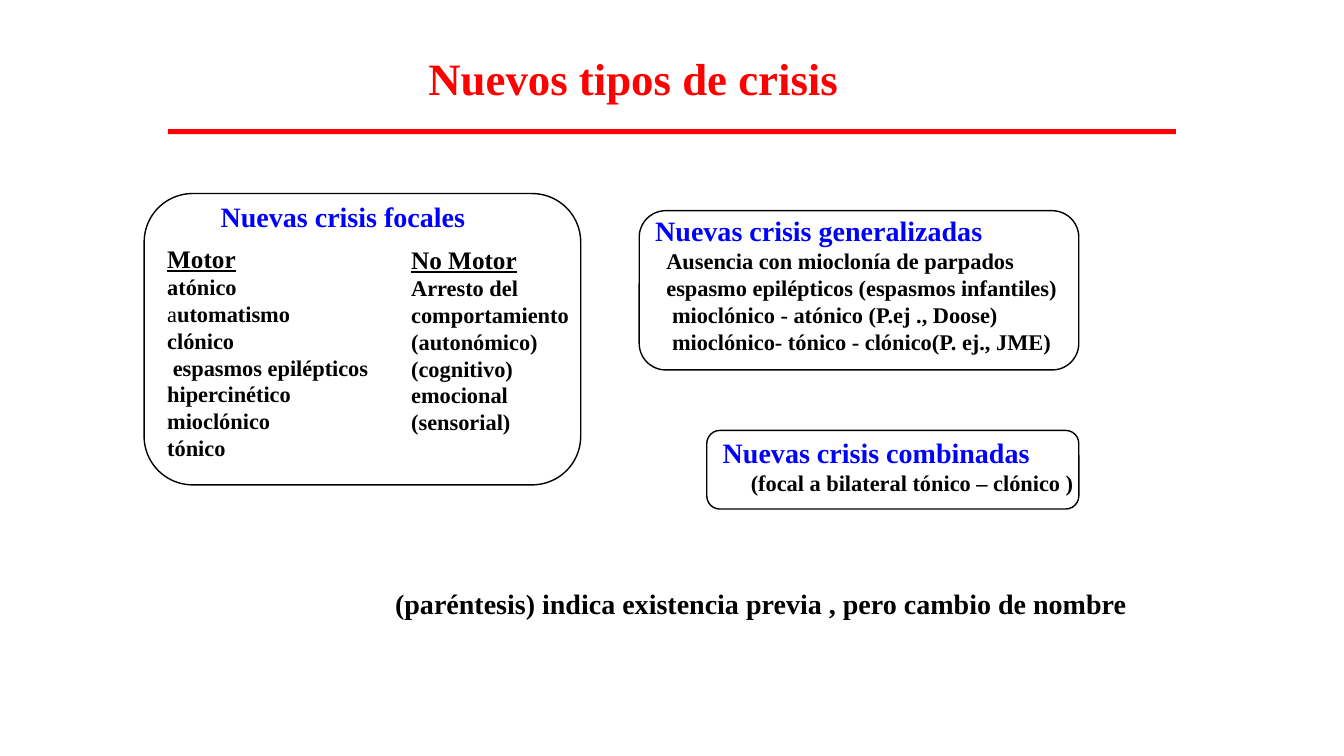
from pptx import Presentation
from pptx.dml.color import RGBColor
from pptx.enum.shapes import MSO_SHAPE
from pptx.util import Inches, Pt

RECT, ROUND = MSO_SHAPE.RECTANGLE, MSO_SHAPE.ROUNDED_RECTANGLE
FONT = "Times New Roman"
COLORS = {"red": "FF0000", "blue": "0000FF", "black": "000000"}
W, H = 13.33, 7.5
INDENT = 0.0556  # width of one indent step, in inches

# Text styles: size, colour, bold, underline
STYLES = {
    "title": (32, "red", True, False),
    "heading": (20, "blue", True, False),
    "note": (20, "black", True, False),
    "column": (18, "black", True, True),
    "item": (16, "black", True, False),
    "light": (16, "black", False, False),
}

# Outlined panels: left, top, width, height
PANELS = [
    (1.43, 1.92, 4.33, 2.89),
    (6.34, 2.09, 4.36, 1.58),
    (7.01, 4.27, 3.69, 0.78),
]

# Text blocks: box, then lines of (indent steps, [(style, text), ...])
BLOCKS = [
    ((4.15, 0.45, 4.42, 0.64), [(0, [("title", "Nuevos tipos de crisis")])]),
    ((2.09, 1.93, 3.1, 0.44), [(0, [("heading", "Nuevas crisis focales")])]),
    ((1.56, 2.36, 2.61, 2.29), [
        (0, [("column", "Motor")]),
        (0, [("item", "atónico")]),
        (0, [("light", "a"), ("item", "utomatismo")]),
        (0, [("item", "clónico")]),
        (1, [("item", "espasmos epilépticos")]),
        (0, [("item", "hipercinético")]),
        (0, [("item", "mioclónico")]),
        (0, [("item", "tónico")]),
    ]),
    ((3.98, 2.37, 1.96, 2.29), [
        (0, [("column", "No Motor")]),
        (0, [("item", "Arresto del comportamiento")]),
        (0, [("item", "(autonómico)")]),
        (0, [("item", "(cognitivo)")]),
        (0, [("item", "emocional")]),
        (0, [("item", "(sensorial)")]),
    ]),
    ((6.4, 2.07, 4.41, 1.51), [
        (0, [("heading", "Nuevas crisis generalizadas")]),
        (2, [("item", "Ausencia con mioclonía de parpados")]),
        (2, [("item", "espasmo epilépticos (espasmos infantiles)")]),
        (3, [("item", "mioclónico - atónico (P.ej ., Doose)")]),
        (3, [("item", "mioclónico- tónico - clónico(P. ej., JME)")]),
    ]),
    ((7.07, 4.27, 3.73, 0.71), [
        (0, [("heading", "Nuevas crisis combinadas")]),
        (5, [("item", "(focal a bilateral tónico – clónico )")]),
    ]),
    ((3.82, 5.77, 7.5, 0.44), [
        (0, [("note", "(paréntesis) indica existencia previa , pero cambio de nombre")]),
    ]),
]


def color(name):
    return RGBColor.from_string(COLORS[name])


def add_shape(s, kind, box):
    sp = s.shapes.add_shape(kind, *map(Inches, box))
    sp.shadow.inherit = False
    return sp


def add_text(s, box, lines):
    tf = s.shapes.add_textbox(*map(Inches, box)).text_frame
    tf.word_wrap = True
    for i, (steps, runs) in enumerate(lines):
        p = tf.add_paragraph() if i else tf.paragraphs[0]
        if steps:
            p._p.get_or_add_pPr().set("marL", str(Inches(steps * INDENT)))
        for style, text in runs:
            size, name, bold, underline = STYLES[style]
            r = p.add_run()
            r.text = text
            r.font.name, r.font.size = FONT, Pt(size)
            r.font.bold, r.font.underline = bold, underline
            r.font.color.rgb = color(name)


def main():
    prs = Presentation()
    prs.slide_width, prs.slide_height = Inches(W), Inches(H)
    s = prs.slides.add_slide(prs.slide_layouts[6])

    # Rule under the title, three quarters of the slide wide
    rule = add_shape(s, RECT, (W / 8, 1.28, W * 3 / 4, 0.05))
    rule.fill.solid()
    rule.fill.fore_color.rgb = color("red")
    rule.line.fill.background()

    # Panels
    for box in PANELS:
        panel = add_shape(s, ROUND, box)
        panel.fill.background()
        panel.line.color.rgb = color("black")
        panel.line.width = Pt(1)

    # Text
    for box, lines in BLOCKS:
        add_text(s, box, lines)

    prs.save("out.pptx")


if __name__ == "__main__":
    main()
